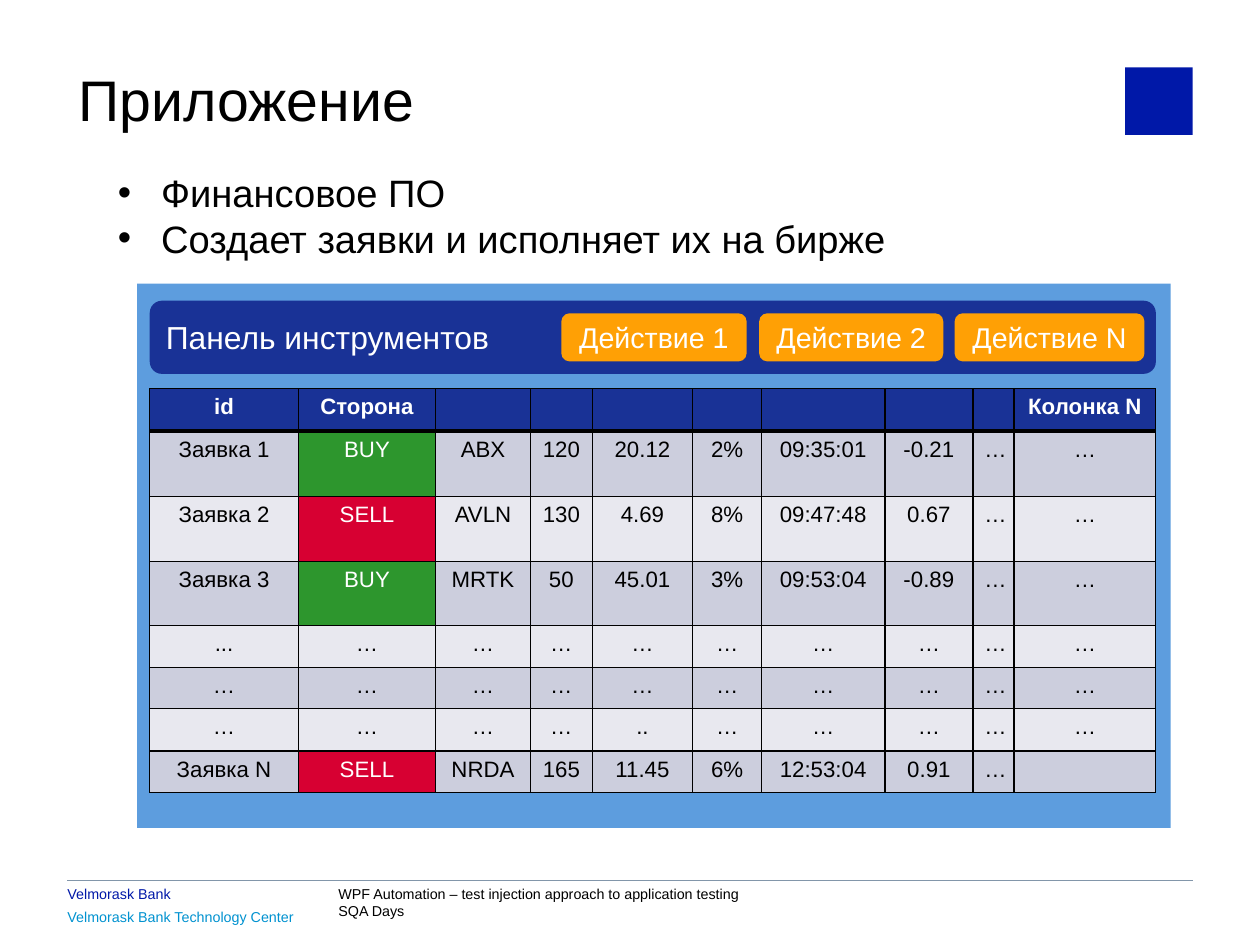
import lxml.etree
import pptx
import pptx.dml.color
import pptx.enum.shapes
import pptx.enum.text
import pptx.oxml
import pptx.oxml.ns
import pptx.util

COLORS = {
    "black": "000000", "white": "FFFFFF", "brand": "0018A8", "center": "0092D0",
    "rule": "8296AA", "window": "5D9DDE", "navy": "193296", "action": "FFA005",
    "odd": "CCCEDD", "even": "E8E8EF", "BUY": "2D962D", "SELL": "D70032",
}
COLUMNS, ROWS = 1102, 829
STEP = pptx.util.Inches(0.01)
RECT = pptx.enum.shapes.MSO_SHAPE.RECTANGLE
ROUNDED = pptx.enum.shapes.MSO_SHAPE.ROUNDED_RECTANGLE
LEFT, CENTER = pptx.enum.text.PP_ALIGN.LEFT, pptx.enum.text.PP_ALIGN.CENTER
TOP, MIDDLE = pptx.enum.text.MSO_ANCHOR.TOP, pptx.enum.text.MSO_ANCHOR.MIDDLE

COLUMN_WIDTHS = [130, 120, 83, 54, 88, 60, 108, 77, 36, 124]
ROW_HEIGHTS = [37, 57, 57, 56, 37, 36, 37, 36]
ELLIPSIS_COLUMN = 8
ORDERS = [
    ["id", "Сторона"] + [""] * 7 + ["Колонка N"],
    ["Заявка 1", "BUY", "ABX", "120", "20.12", "2%", "09:35:01", "-0.21", "…", "…"],
    ["Заявка 2", "SELL", "AVLN", "130", "4.69", "8%", "09:47:48", "0.67", "…", "…"],
    ["Заявка 3", "BUY", "MRTK", "50", "45.01", "3%", "09:53:04", "-0.89", "…", "…"],
    ["..."] + ["…"] * 9,
    ["…"] * 10,
    ["…"] * 4 + [".."] + ["…"] * 5,
    ["Заявка N", "SELL", "NRDA", "165", "11.45", "6%", "12:53:04", "0.91", "…", ""],
]


def rgb(name):
    return pptx.dml.color.RGBColor.from_string(COLORS[name])


def grid(*cells):
    return [cell * STEP for cell in cells]


def within(box, left, top, width, height):
    return box[0] + left, box[1] + top, width, height


def style(paragraph, size, color, align=LEFT, bold=False):
    paragraph.alignment = align
    font = paragraph.font
    font.name, font.size, font.bold = "Arial", pptx.util.Pt(size), bold
    font.color.rgb = rgb(color)


def set_frame(frame, insets, anchor=TOP, wrap=True):
    frame.auto_size = pptx.enum.text.MSO_AUTO_SIZE.NONE
    frame.word_wrap, frame.vertical_anchor = wrap, anchor
    frame.margin_left = frame.margin_right = insets[0] * STEP
    frame.margin_top = frame.margin_bottom = insets[1] * STEP


def move(placeholder, box):
    (placeholder.left, placeholder.top,
     placeholder.width, placeholder.height) = grid(*box)


def add_panel(slide, kind, box, color, text="", size=18, align=CENTER):
    panel = slide.shapes.add_shape(kind, *grid(*box))
    panel.shadow.inherit = False
    panel.fill.solid()
    panel.fill.fore_color.rgb = rgb(color)
    panel.line.fill.background()
    if text:
        set_frame(panel.text_frame, (11, 6), MIDDLE)
        panel.text_frame.text = text
        style(panel.text_frame.paragraphs[0], size, "white", align)


def add_heading(slide, box):
    title = slide.shapes.title
    move(title, within(box, 0, 0, 900, 66))
    set_frame(title.text_frame, (10, 5))
    title.text_frame.text = "Приложение"
    heading = title.text_frame.paragraphs[0]
    heading.line_spacing = 0.93
    style(heading, 36, "black")
    add_panel(slide, RECT, within(box, 925, 2, 59, 59), "brand")


def add_features(slide, box):
    body = slide.placeholders[1]
    move(body, box)
    set_frame(body.text_frame, (11, 6))
    body.text_frame.text = "Финансовое ПО\nСоздает заявки и исполняет их на бирже"
    for feature in body.text_frame.paragraphs:
        feature.space_before = pptx.util.Pt(0)
        properties = feature._p.get_or_add_pPr()
        properties.set("marL", str(38 * STEP))
        properties.set("indent", str(-38 * STEP))
        bullet = lxml.etree.SubElement(properties, pptx.oxml.ns.qn("a:buChar"))
        bullet.set("char", "•")
        style(feature, 24, "black")


def add_toolbar(slide, box):
    add_panel(slide, ROUNDED, box, "navy", "Панель инструментов", 20, LEFT)
    for label, left, width in (("1", 360, 162), ("2", 533, 161), ("N", 704, 166)):
        add_panel(slide, ROUNDED, within(box, left, 11, width, 42), "action",
                  f"Действие {label}")


def set_borders(cell, row):
    properties = cell._tc.get_or_add_tcPr()
    heavy = {0: "B", 1: "T"}.get(row)
    for side in "LRTB":
        width = pptx.util.Pt(3 if side == heavy else 1)
        properties.append(pptx.oxml.parse_xml(
            f'<a:ln{side} {pptx.oxml.ns.nsdecls("a")} w="{width}"><a:solidFill>'
            f'<a:srgbClr val="{COLORS["black"]}"/></a:solidFill></a:ln{side}>'))


def fill_order_cell(cell, row, column, text):
    set_borders(cell, row)
    band = "navy" if row == 0 else ("odd" if row % 2 else "even")
    background = text if text in ("BUY", "SELL") else band
    cell.fill.solid()
    cell.fill.fore_color.rgb = rgb(background)
    cell.text = text
    if not text:
        cell.margin_top = cell.margin_bottom = 0
    color = "black" if background in ("odd", "even") else "white"
    align = LEFT if column == ELLIPSIS_COLUMN else CENTER
    style(cell.text_frame.paragraphs[0], 14, color, align, row == 0)


def add_orders(slide, box):
    orders = slide.shapes.add_table(
        len(ROW_HEIGHTS), len(COLUMN_WIDTHS), *grid(*box)).table
    orders.first_row = orders.horz_banding = False
    for column, width in zip(orders.columns, COLUMN_WIDTHS):
        column.width = width * STEP
    for row, height in zip(orders.rows, ROW_HEIGHTS):
        row.height = height * STEP
    for row, values in enumerate(ORDERS):
        for column, text in enumerate(values):
            fill_order_cell(orders.cell(row, column), row, column, text)


def add_window(slide, box):
    add_panel(slide, RECT, box, "window")
    add_toolbar(slide, within(box, 11, 15, 880, 64))
    add_orders(slide, within(box, 11, 92, 880, 353))


def add_footer(slide, box):
    left, top, width, height = box
    rule = slide.shapes.add_connector(
        pptx.enum.shapes.MSO_CONNECTOR.STRAIGHT,
        *grid(left, top, left + width, top))
    rule.line.color.rgb = rgb("rule")
    rule.line.width = pptx.util.Pt(0.5)
    lxml.etree.SubElement(rule._element.spPr, pptx.oxml.ns.qn("a:effectLst"))
    credits = (
        ("Velmorask Bank", "brand", 0, 4, 200, 15),
        ("Velmorask Bank Technology Center", "center", 0, 24, 220, 15),
        ("WPF Automation – test injection approach to application testing\nSQA Days",
         "black", 237, 4, 354, 30),
    )
    for text, color, *place in credits:
        credit = slide.shapes.add_textbox(*grid(*within(box, *place))).text_frame
        set_frame(credit, (0, 0), wrap=False)
        credit.text = text
        for line in credit.paragraphs:
            style(line, 9, color)


def main():
    deck = pptx.Presentation()
    deck.slide_width, deck.slide_height = grid(COLUMNS, ROWS)
    slide = deck.slides.add_slide(deck.slide_layouts[1])
    add_heading(slide, (59, 57, 984, 66))
    add_features(slide, (92, 142, 700, 92))
    add_window(slide, (120, 248, 904, 476))
    add_footer(slide, (59, 770, 984, 59))
    deck.save("out.pptx")


if __name__ == "__main__":
    main()
